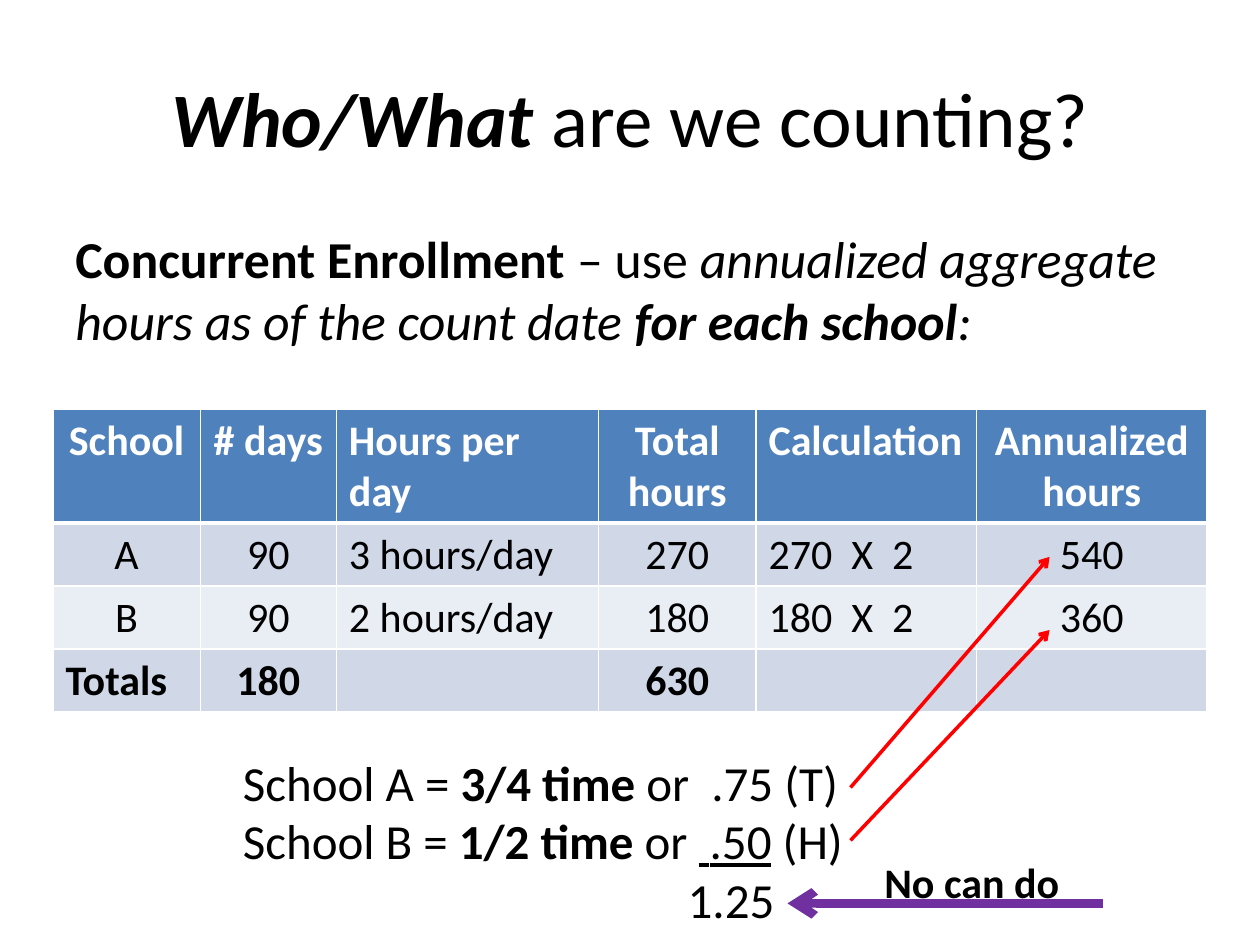
from lxml.etree import SubElement
from pptx import Presentation
from pptx.dml.color import RGBColor
from pptx.enum.shapes import MSO_CONNECTOR as CONNECTOR
from pptx.enum.text import MSO_ANCHOR as ANCHOR, PP_ALIGN as ALIGN
from pptx.oxml.ns import qn
from pptx.util import Inches, Pt

FONT = "Calibri"
BLACK, WHITE, RED, PURPLE = "000000", "FFFFFF", "FF0000", "7030A0"
HEADER_FILL, BAND_FILLS = "4F81BD", ("D0D8E8", "E9EDF4")
BOLD, ITALIC, UNDERLINE = {"bold": True}, {"italic": True}, {"underline": True}
BOLD_ITALIC = BOLD | ITALIC

# Paragraphs are lists of (text, format) runs.
TITLE = [[("Who/What ", BOLD_ITALIC), ("are we counting?", {})]]
RULE = [[
    ("Concurrent Enrollment", BOLD), (" – use ", {}),
    ("annualized aggregate hours as of the count date ", ITALIC),
    ("for each school", BOLD_ITALIC), (":", ITALIC),
]]
SHARES = [
    [("School A = ", {}), ("3/4 time ", BOLD), ("or  .75 (T)", {})],
    [("School B = ", {}), ("1/2 time", BOLD), (" or ", {}),
     (" ", BOLD | UNDERLINE), (".50", UNDERLINE), (" (H)", {})],
    [("1.25", {})],
]
SUM_INDENT = 3.53
VERDICT = [[("No can do", BOLD)]]

# box (left, top, width, height), paragraphs, size, alignment, anchor
TEXTS = [
    ((0.5, 0.3, 9, 1.25), TITLE, 44, ALIGN.CENTER, ANCHOR.MIDDLE),
    ((0.5, 1.75, 9, 1.33), RULE, 29.6, ALIGN.LEFT, ANCHOR.TOP),
    ((1.83, 5.92, 5.42, 1.51), SHARES, 28, ALIGN.LEFT, ANCHOR.TOP),
    ((6.92, 6.75, 1.75, 0.5), VERDICT, 24, ALIGN.LEFT, ANCHOR.TOP),
]

HOURS = [
    ("School", "# days", "Hours per day", "Total hours", "Calculation", "Annualized hours"),
    ("A", "90", "3 hours/day", "270", "270  X  2", "540"),
    ("B", "90", "2 hours/day", "180", "180  X  2", "360"),
    ("Totals", "180", "", "630", "", ""),
]
HOURS_BOX = (0.42, 3.25, 9.17, 2.4)
COLUMN_WIDTHS = (1.17, 1.08, 2.08, 1.25, 1.75, 1.83)
ROW_HEIGHTS = (0.9, 0.5, 0.5, 0.5)
LEFT_COLUMNS = (2, 4)

# start, end, colour, width in points
ARROWS = [
    ((6.75, 6.25), (8.33, 4.42), RED, 2),
    ((6.75, 6.67), (8.33, 5), RED, 2),
    ((8.75, 7.17), (6.25, 7.17), PURPLE, 5),
]


def rgb(hex_colour):
    return RGBColor.from_string(hex_colour)


def inches(values):
    return [Inches(value) for value in values]


def add_run(paragraph, text, size, colour, formats):
    run = paragraph.add_run()
    run.text = text
    run.font.name, run.font.size = FONT, Pt(size)
    run.font.color.rgb = rgb(colour)
    for attribute, value in formats.items():
        setattr(run.font, attribute, value)


def add_text(slide, box, paragraphs, size, align, anchor):
    frame = slide.shapes.add_textbox(*inches(box)).text_frame
    frame.word_wrap = True
    frame.vertical_anchor = anchor
    for index, runs in enumerate(paragraphs):
        paragraph = frame.add_paragraph() if index else frame.paragraphs[0]
        paragraph.alignment = align
        for text, formats in runs:
            add_run(paragraph, text, size, BLACK, formats)
    return frame


def add_borders(cell, widths):
    """Draw white cell borders; widths maps a side (L, R, T, B) to points."""
    properties = cell._tc.get_or_add_tcPr()
    for side, width in widths.items():
        line = SubElement(properties, qn(f"a:ln{side}"), w=str(Pt(width)))
        SubElement(SubElement(line, qn("a:solidFill")), qn("a:srgbClr"), val=WHITE)


def add_hours_table(slide):
    table = slide.shapes.add_table(
        len(HOURS), len(COLUMN_WIDTHS), *inches(HOURS_BOX)).table
    for column, width in zip(table.columns, inches(COLUMN_WIDTHS)):
        column.width = width
    for row, height in zip(table.rows, inches(ROW_HEIGHTS)):
        row.height = height
    last = len(HOURS) - 1
    for r, values in enumerate(HOURS):
        fill = BAND_FILLS[(r - 1) % 2] if r else HEADER_FILL
        formats = BOLD if r in (0, last) else {"bold": False}
        for c, value in enumerate(values):
            cell = table.cell(r, c)
            add_borders(cell, {"L": 1, "R": 1, "T": 3 if r == 1 else 1,
                               "B": 1 if r else 3})
            cell.fill.solid()
            cell.fill.fore_color.rgb = rgb(fill)
            if value:
                paragraph = cell.text_frame.paragraphs[0]
                is_left = c in LEFT_COLUMNS or value == "Totals"
                paragraph.alignment = ALIGN.LEFT if is_left else ALIGN.CENTER
                add_run(paragraph, value, 24, BLACK if r else WHITE, formats)


def add_arrow(slide, start, end, colour, width):
    arrow = slide.shapes.add_connector(
        CONNECTOR.STRAIGHT, *inches(start + end))
    arrow.line.color.rgb = rgb(colour)
    arrow.line.width = Pt(width)
    SubElement(arrow.line._get_or_add_ln(), qn("a:tailEnd"), type="arrow")
    SubElement(arrow._element.spPr, qn("a:effectLst"))


def main():
    deck = Presentation()
    deck.slide_width, deck.slide_height = inches((10, 7.5))
    slide = deck.slides.add_slide(deck.slide_layouts[6])
    title, rule, shares, verdict = TEXTS
    add_text(slide, *title)
    add_text(slide, *rule)
    add_hours_table(slide)
    total = add_text(slide, *shares).paragraphs[-1]
    total._p.get_or_add_pPr().set("marL", str(Inches(SUM_INDENT)))
    for arrow in ARROWS:
        add_arrow(slide, *arrow)
    add_text(slide, *verdict)
    deck.save("out.pptx")


if __name__ == "__main__":
    main()
